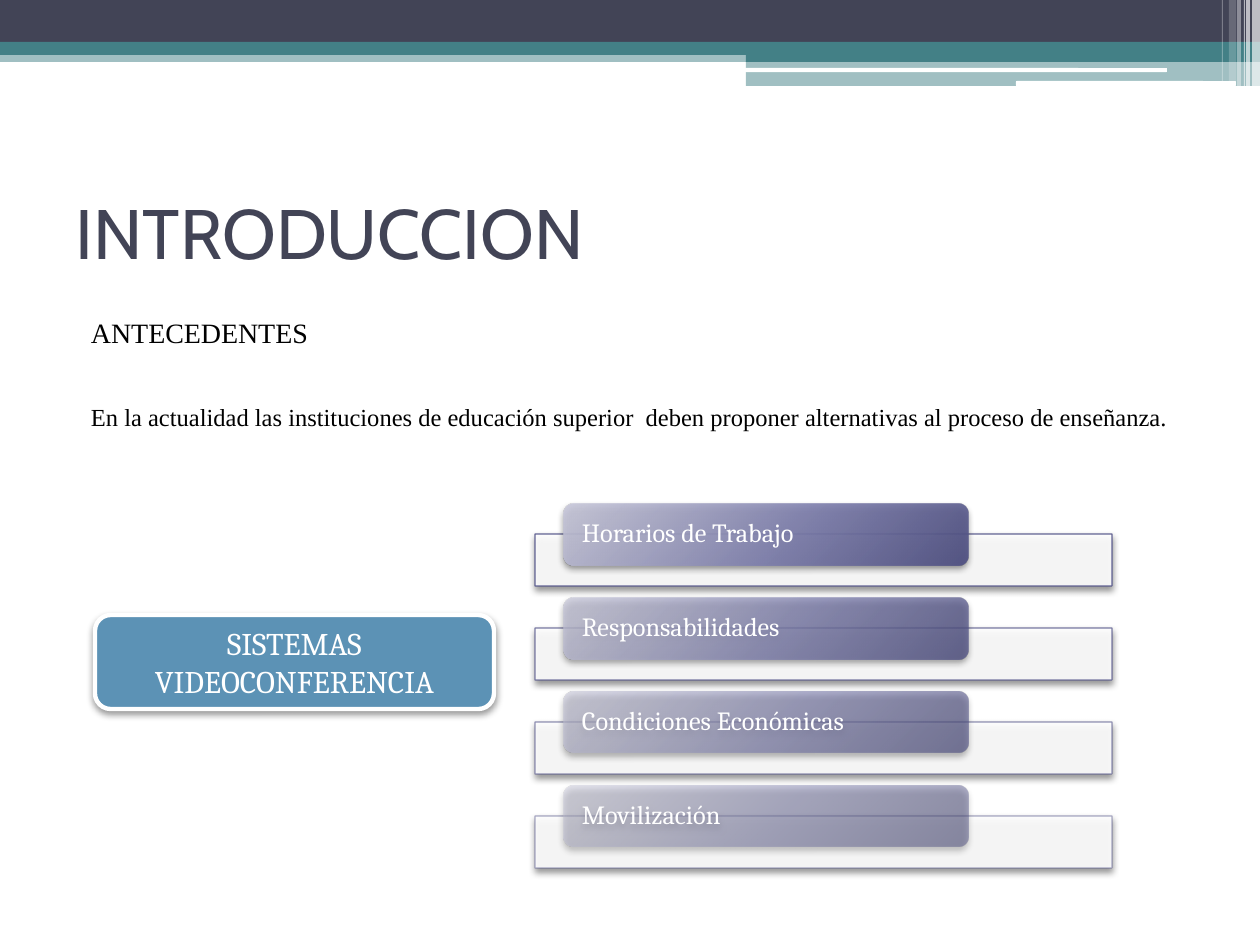
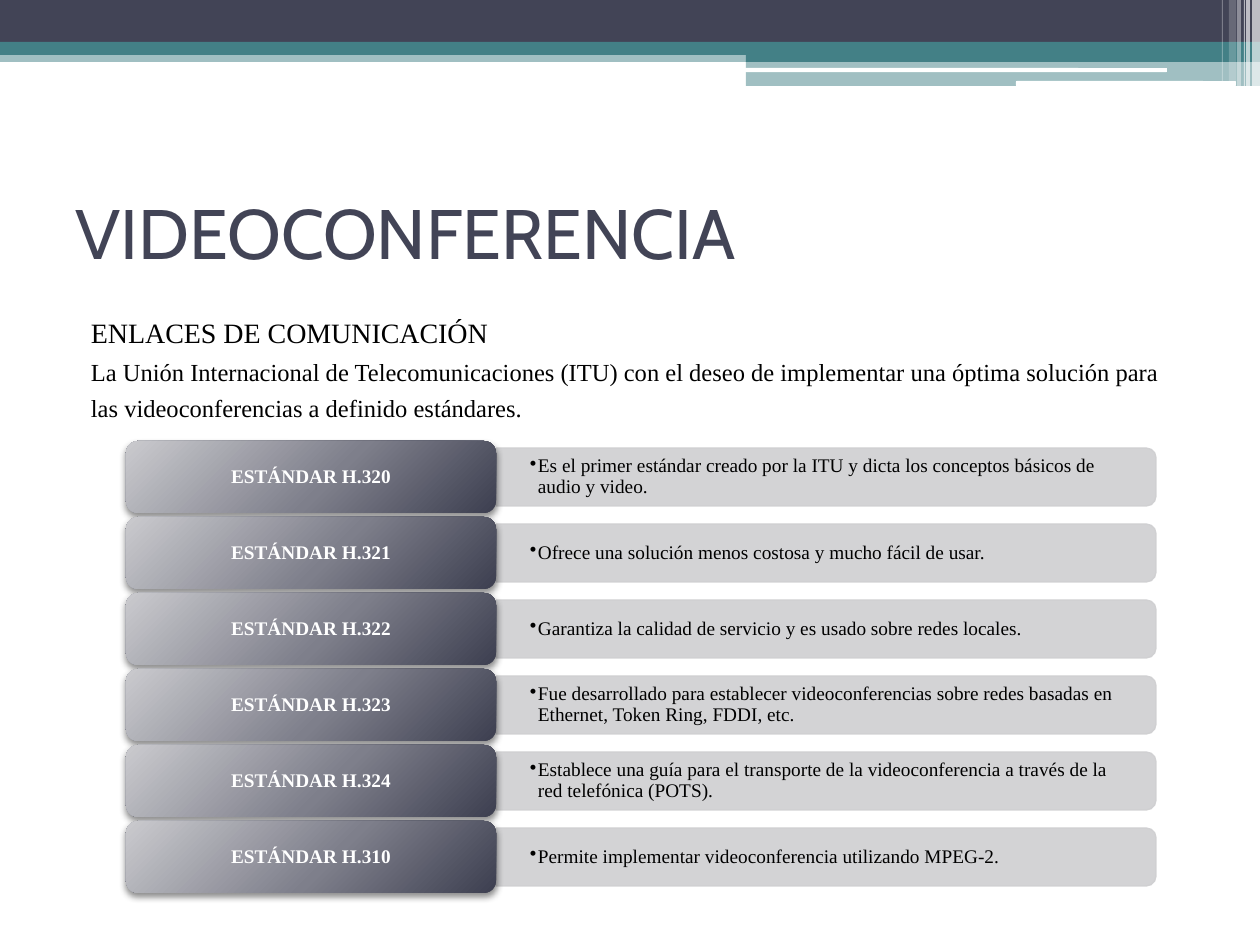
import pptx
import pptx.util
import pptx.dml.color
import pptx.enum.shapes
import pptx.enum.text
import pptx.oxml
import pptx.oxml.ns

EMU = 914400 / 126
INK = {
    "dark": "424456", "teal": "438086", "white": "FFFFFF", "black": "000000",
    "violet": "53548A", "blue": "5C92B5", "gray": "CFCFD1",
}
VIOLETS = ["C9C9DA", "7F80AE", "4D4E81"]
SLATES = ["CACACE", "7E7F8B", "3D3F50"]
NS = pptx.oxml.ns.nsdecls("a")
FIND = {"a": "http://schemas.openxmlformats.org/drawingml/2006/main"}
KIND = pptx.enum.shapes.MSO_SHAPE
ALIGN = pptx.enum.text.PP_ALIGN
MIDDLE = pptx.enum.text.MSO_ANCHOR.MIDDLE
SERIF = "Times New Roman"


def draw(slide, kind, box, fill, alpha=100, line=None, shade=0):
    """Add a shape; fill is a colour or gradient list, line is (colour, pt, alpha)."""
    shape = slide.shapes.add_shape(kind, *[round(n * EMU) for n in box])
    props = shape._element.spPr
    shape.shadow.inherit = False
    tints = []
    if isinstance(fill, list):
        shape.fill.gradient()
        stops = "".join(
            f'<a:gs pos="{pos}"><a:srgbClr val="{tint}"><a:alpha val="{alpha * 1000}"/>'
            f'</a:srgbClr></a:gs>' for pos, tint in zip((0, 55000, 100000), fill))
        blend = pptx.oxml.parse_xml(
            f'<a:gradFill {NS} rotWithShape="1"><a:gsLst>{stops}</a:gsLst>'
            '<a:path path="circle"><a:fillToRect l="-40000" t="-90000" r="140000" b="190000"/>'
            '</a:path></a:gradFill>')
        props.replace(props.find("a:gradFill", FIND), blend)
    else:
        shape.fill.solid()
        shape.fill.fore_color.rgb = pptx.dml.color.RGBColor.from_string(fill)
        tints.append(("a:solidFill/a:srgbClr", alpha))
    if line:
        shape.line.color.rgb = pptx.dml.color.RGBColor.from_string(line[0])
        shape.line.width = pptx.util.Pt(line[1])
        tints.append(("a:ln/a:solidFill/a:srgbClr", line[2]))
    else:
        shape.line.fill.background()
    for route, level in tints:
        if level < 100:
            props.find(route, FIND).append(
                pptx.oxml.parse_xml(f'<a:alpha {NS} val="{level * 1000}"/>'))
    if shade:
        props.find("a:effectLst", FIND).append(pptx.oxml.parse_xml(
            f'<a:outerShdw {NS} blurRad="50800" dist="25400" dir="5400000" rotWithShape="0">'
            f'<a:srgbClr val="{INK["black"]}"><a:alpha val="{shade * 1000}"/></a:srgbClr>'
            '</a:outerShdw>'))
    return shape


def write(shape, lines, font, sizes, color, align=ALIGN.LEFT, inset=(13, 6),
          anchor=MIDDLE, space=1, bold=False):
    """Fill a shape with one paragraph per line, each with its own size."""
    frame = shape.text_frame
    frame.text = "\n".join(lines)
    frame.word_wrap = True
    frame.vertical_anchor = anchor
    frame.margin_left = frame.margin_right = round(inset[0] * EMU)
    frame.margin_top = frame.margin_bottom = round(inset[1] * EMU)
    for para, size in zip(frame.paragraphs, sizes):
        para.alignment = align
        para.line_spacing = space
        for run in para.runs:
            run.font.name = font
            run.font.size = pptx.util.Pt(size)
            run.font.bold = bold
            run.font.color.rgb = pptx.dml.color.RGBColor.from_string(color)
    return frame


deck = pptx.Presentation()
deck.slide_width = round(1260 * EMU)
deck.slide_height = round(945 * EMU)

# Header bands: kind, box, colour, opacity
BANDS = [
    (KIND.RECTANGLE, (0, 50, 1260, 12), "teal", 50),
    (KIND.RECTANGLE, (0, 0, 1260, 43), "dark", 100),
    (KIND.RECTANGLE, (0, 42, 1260, 13), "teal", 100),
    (KIND.RECTANGLE, (746, 49, 514, 13), "teal", 100),
    (KIND.RECTANGLE, (746, 61, 514, 25), "teal", 50),
    (KIND.ROUNDED_RECTANGLE, (745, 68, 422, 4), "white", 100),
    (KIND.ROUNDED_RECTANGLE, (1016, 81, 220, 5), "white", 100),
]
# Light stripes at the right: left, width, height, opacity
STRIPES = [(1252, 8, 86, 65), (1246, 4, 86, 65), (1244, 1, 86, 60),
           (1237, 4, 86, 40), (1229, 7, 81, 20), (1222, 1, 81, 30)]
for left, width, height, alpha in STRIPES:
    BANDS.append((KIND.RECTANGLE, (left, 0, width, height), "white", alpha))

# Title, body lines, gap in points before each body line
PAGES = [
    ("INTRODUCCION",
     ["ANTECEDENTES",
      "En la actualidad las instituciones de educación superior  deben proponer "
      "alternativas al proceso de enseñanza."],
     [3, 30]),
    ("VIDEOCONFERENCIA",
     ["ENLACES DE COMUNICACIÓN",
      "La Unión Internacional de Telecomunicaciones (ITU) con el deseo de "
      "implementar una óptima solución para",
      "las videoconferencias a definido estándares."],
     [3, 4, 4]),
]
slides = []
for title, body, gaps in PAGES:
    slide = deck.slides.add_slide(deck.slide_layouts[6])
    slides.append(slide)
    for kind, box, color, alpha in BANDS:
        draw(slide, kind, box, INK[color], alpha)
    head = slide.shapes.add_textbox(*[round(n * EMU) for n in (63, 158, 1134, 147)])
    write(head, [title], "Cabin", [40], INK["dark"])
    text = slide.shapes.add_textbox(*[round(n * EMU) for n in (63, 310, 1134, 596)])
    frame = write(text, body, SERIF, [16, 14, 14], INK["black"], inset=(28, 6),
                  anchor=pptx.enum.text.MSO_ANCHOR.TOP)
    for para, gap in zip(frame.paragraphs, gaps):
        para.space_before = pptx.util.Pt(gap)
intro, video = slides

# Introduction: fading list of factors beside the main box
FACTORS = [("Horarios de Trabajo", 90), ("Responsabilidades", 77),
           ("Condiciones Económicas", 63), ("Movilización", 50)]
for row, (factor, alpha) in enumerate(FACTORS):
    top = 504 + 94 * row
    draw(intro, KIND.RECTANGLE, (535, top + 30, 577, 52), INK["white"], 90,
         (INK["violet"], 0.75, alpha), 45)
    tab = draw(intro, KIND.ROUNDED_RECTANGLE, (564, top, 404, 61), VIOLETS, alpha, shade=45)
    write(tab, [factor], "Cambria", [15], INK["white"], inset=(15, 0), space=0.9)
main = draw(intro, KIND.ROUNDED_RECTANGLE, (95, 615, 399, 94), INK["blue"],
            line=(INK["white"], 2.5, 100), shade=40)
write(main, ["SISTEMAS VIDEOCONFERENCIA"], "Cambria", [18], INK["white"], ALIGN.CENTER)

# Videoconference: one row per standard
NORMS = [
    ("H.320", "Es el primer estándar creado por la ITU y dicta los conceptos básicos de "
              "audio y video."),
    ("H.321", "Ofrece una solución menos costosa y mucho fácil de usar."),
    ("H.322", "Garantiza la calidad de servicio y es usado sobre redes locales."),
    ("H.323", "Fue desarrollado para establecer videoconferencias sobre redes basadas en "
              "Ethernet, Token Ring, FDDI, etc."),
    ("H.324", "Establece una guía para el transporte de la videoconferencia a través de la "
              "red telefónica (POTS)."),
    ("H.310", "Permite implementar videoconferencia utilizando MPEG-2."),
]
for row, (norm, note) in enumerate(NORMS):
    top = 441 + 76 * row
    mid = top + 36
    bar = draw(video, KIND.ROUND_2_SAME_RECTANGLE, (797, mid - 330, 58, 660), INK["gray"], 90,
               (INK["gray"], 0.75, 90))
    bar.rotation = 90
    text = video.shapes.add_textbox(*[round(n * EMU) for n in (496, mid - 26, 655, 52)])
    frame = write(text, [note], SERIF, [11], INK["black"], inset=(34, 18), space=0.9)
    props = frame.paragraphs[0]._p.get_or_add_pPr()
    props.set("marL", str(round(8 * EMU)))
    props.set("indent", str(round(-8 * EMU)))
    props.append(pptx.oxml.parse_xml(f'<a:buChar {NS} char="•"/>'))
    tab = draw(video, KIND.ROUNDED_RECTANGLE, (126, top, 370, 72), SLATES, shade=45)
    write(tab, ["ESTÁNDAR " + norm], SERIF, [11], INK["white"], ALIGN.CENTER,
          inset=(6, 3), space=0.9, bold=True)

deck.save("out.pptx")
